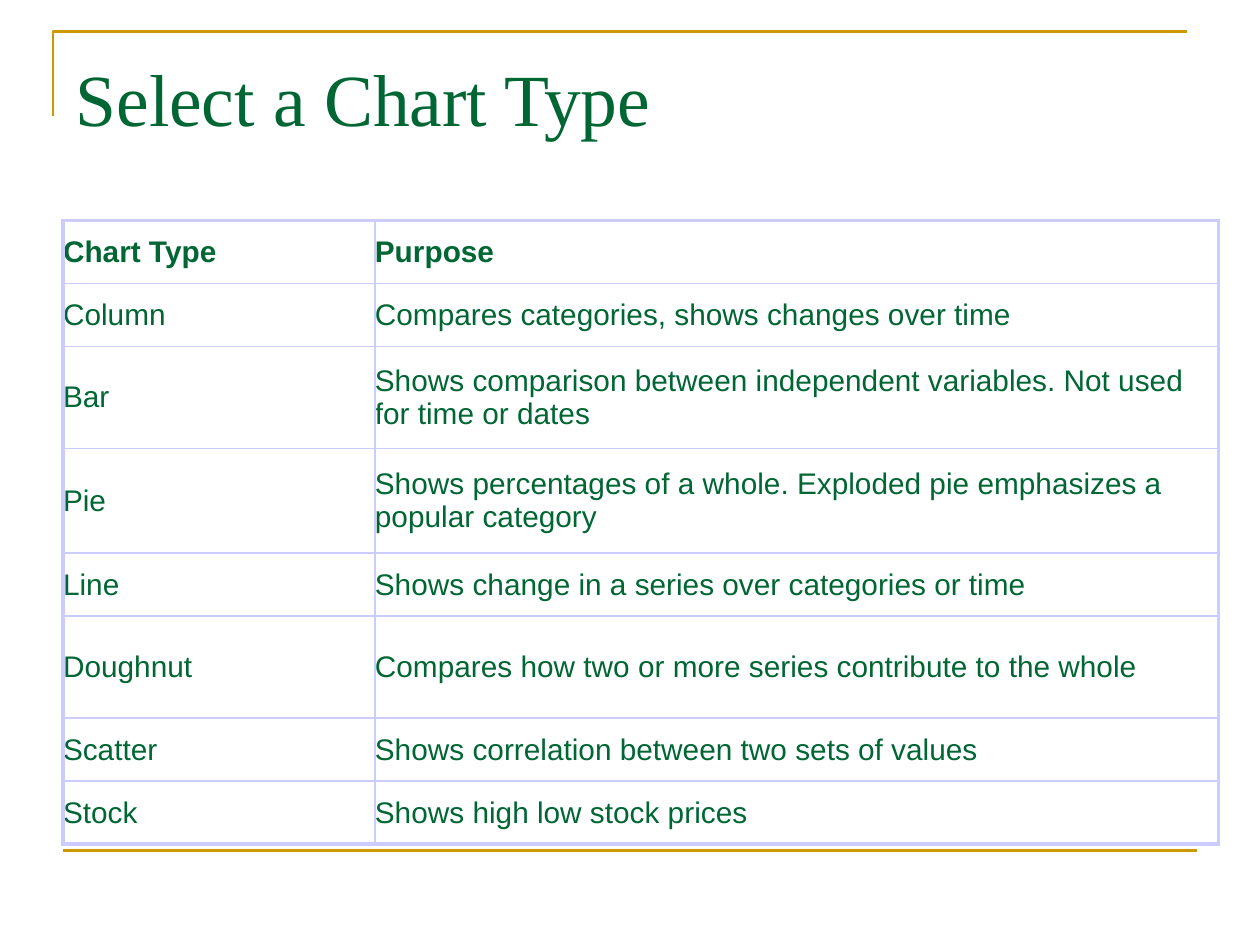
from dataclasses import dataclass

from lxml import etree
from pptx import Presentation
from pptx.dml.color import RGBColor
from pptx.enum.shapes import MSO_CONNECTOR
from pptx.enum.text import MSO_ANCHOR, MSO_AUTO_SIZE, PP_ALIGN
from pptx.oxml.ns import qn
from pptx.util import Inches, Pt

STRAIGHT = MSO_CONNECTOR.STRAIGHT
TOP, MIDDLE = MSO_ANCHOR.TOP, MSO_ANCHOR.MIDDLE
LEFT = PP_ALIGN.LEFT
NO_AUTOFIT = MSO_AUTO_SIZE.NONE
TITLE_ONLY = 5


@dataclass(frozen=True)
class Theme:
    text: str = "006633"
    accent: str = "CC9900"
    border: str = "CCCCFF"
    title_font: str = "Times New Roman"
    body_font: str = "Arial"
    title_size: float = 42
    body_size: float = 17
    rule_width: float = 1.5
    outer_width: float = 2.25
    inner_width: float = 1


THEME = Theme()

# Row height and the two texts of each row
CHART_TYPES = [
    (0.5, "Chart Type", "Purpose"),
    (0.5, "Column", "Compares categories, shows changes over time"),
    (0.81, "Bar", "Shows comparison between independent variables. Not used for time or dates"),
    (0.83, "Pie", "Shows percentages of a whole. Exploded pie emphasizes a popular category"),
    (0.5, "Line", "Shows change in a series over categories or time"),
    (0.81, "Doughnut", "Compares how two or more series contribute to the whole"),
    (0.5, "Scatter", "Shows correlation between two sets of values"),
    (0.5, "Stock", "Shows high low stock prices"),
]
COLUMN_SHARES = (0.27, 0.73)


def add_text(paragraph, text, font, size, bold=False):
    paragraph.alignment = LEFT
    run = paragraph.add_run()
    run.text = text
    run.font.name = font
    run.font.size = Pt(size)
    run.font.bold = bold
    run.font.color.rgb = RGBColor.from_string(THEME.text)


def style_rule(line):
    line.color.rgb = RGBColor.from_string(THEME.accent)
    line.width = Pt(THEME.rule_width)


def add_frame(slide, left, top, width, height):
    """Corner bracket at the top left and a rule along the bottom."""
    bracket_drop = 0.67
    builder = slide.shapes.build_freeform(
        Inches(left), Inches(top + bracket_drop), scale=1.0)
    corner = (Inches(left), Inches(top))
    end = (Inches(left + width), Inches(top))
    builder.add_line_segments([corner, end], close=False)
    bracket = builder.convert_to_shape()
    bracket.shadow.inherit = False
    bracket.fill.background()
    style_rule(bracket.line)

    rule_left, rule_top = left + 0.08, top + height
    rule = slide.shapes.add_connector(
        STRAIGHT, Inches(rule_left), Inches(rule_top),
        Inches(rule_left + width), Inches(rule_top))
    style_rule(rule.line)
    etree.SubElement(rule._element.spPr, qn("a:effectLst"))


def add_title(slide, text, left, top, width, height):
    title = slide.shapes.title
    title.left, title.top = Inches(left), Inches(top)
    title.width, title.height = Inches(width), Inches(height)
    frame = title.text_frame
    frame.word_wrap = True
    frame.auto_size = NO_AUTOFIT
    frame.vertical_anchor = TOP
    frame.margin_top = Inches(0.12)
    add_text(frame.paragraphs[0], text, THEME.title_font, THEME.title_size)


def set_borders(cell, outer_sides):
    properties = cell._tc.get_or_add_tcPr()
    for side in "LRTB":
        width = THEME.outer_width if side in outer_sides else THEME.inner_width
        line = etree.SubElement(properties, qn(f"a:ln{side}"), w=str(Pt(width)))
        fill = etree.SubElement(line, qn("a:solidFill"))
        etree.SubElement(fill, qn("a:srgbClr"), val=THEME.border)


def add_chart_type_table(slide, left, top, width):
    row_count, column_count = len(CHART_TYPES), len(COLUMN_SHARES)
    height = sum(row[0] for row in CHART_TYPES)
    table = slide.shapes.add_table(
        row_count, column_count, Inches(left), Inches(top),
        Inches(width), Inches(height)).table
    table.first_row = table.horz_banding = False
    for column, share in zip(table.columns, COLUMN_SHARES):
        column.width = Inches(width * share)

    for row_index, (row_height, *texts) in enumerate(CHART_TYPES):
        table.rows[row_index].height = Inches(row_height)
        for column_index, text in enumerate(texts):
            cell = table.cell(row_index, column_index)
            outer_sides = "L" if column_index == 0 else "R"
            if row_index == 0:
                outer_sides += "T"
            if row_index == row_count - 1:
                outer_sides += "B"
            set_borders(cell, outer_sides)
            cell.fill.background()
            cell.vertical_anchor = MIDDLE
            cell.margin_left = cell.margin_right = 0
            cell.margin_top = cell.margin_bottom = 0
            add_text(cell.text_frame.paragraphs[0], text, THEME.body_font,
                     THEME.body_size, bold=row_index == 0)


def main():
    presentation = Presentation()
    presentation.slide_width, presentation.slide_height = Inches(10), Inches(7.5)
    slide = presentation.slides.add_slide(presentation.slide_layouts[TITLE_ONLY])
    add_frame(slide, 0.42, 0.25, 9, 6.5)
    add_title(slide, "Select a Chart Type", 0.5, 0.3, 9, 1.25)
    add_chart_type_table(slide, 0.5, 1.75, 9.17)
    presentation.save("out.pptx")


if __name__ == "__main__":
    main()
